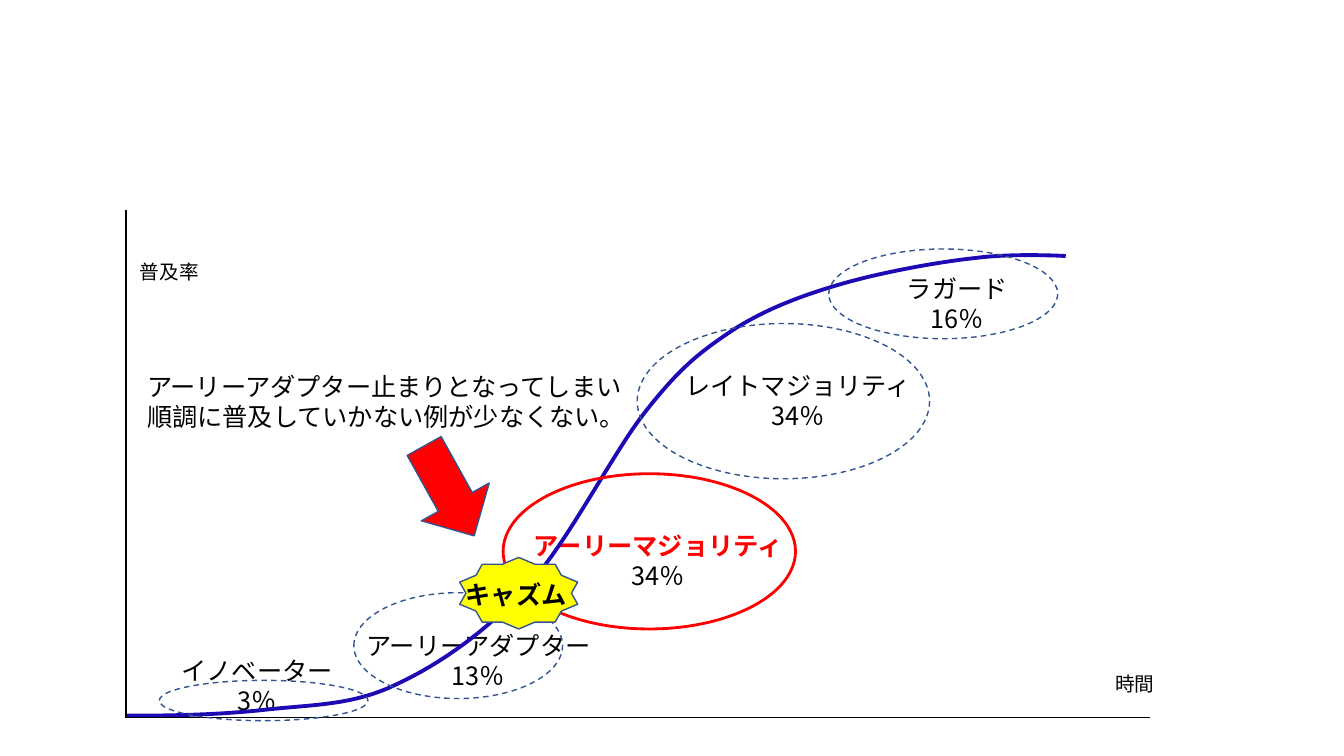
from dataclasses import dataclass

from lxml.etree import SubElement
from pptx import Presentation
from pptx.dml.color import RGBColor
from pptx.enum.dml import MSO_LINE
from pptx.enum.shapes import MSO_CONNECTOR, MSO_SHAPE
from pptx.enum.text import PP_ALIGN
from pptx.oxml.ns import qn
from pptx.util import Inches, Pt


@dataclass(frozen=True)
class Theme:
    """Colours, fonts and type sizes of the slide."""
    ink: str = "000000"
    alert: str = "FF0000"
    curve: str = "1E0AB4"
    outline: str = "325491"
    burst: str = "FFFF00"
    font: str = "Noto Sans CJK JP"
    rate_font: str = "Calibri"
    time_font: str = "Arial"
    body: int = 18
    small: int = 14


@dataclass(frozen=True)
class Box:
    """A rectangle measured in grid cells of a tenth of an inch."""
    left: float
    top: float
    width: float
    height: float

    def inner(self, column, row, columns, rows):
        """Return a box placed relative to this one."""
        return Box(self.left + column, self.top + row, columns, rows)

    def point(self, column, row):
        """Return slide coordinates of a grid point inside this box."""
        return cells(self.left + column), cells(self.top + row)

    def frame(self):
        """Return left, top, width and height as lengths."""
        return tuple(map(cells, (self.left, self.top, self.width, self.height)))


@dataclass(frozen=True)
class Stage:
    """An adopter group with its label and ellipse places in the plot."""
    name: str
    share: str
    label: tuple
    ellipse: tuple
    focus: bool = False


THEME = Theme()
PLOT = Box(12.5, 20.8, 101.6, 50.4)
STAGES = [
    Stage("アーリーマジョリティ", "34％", (39.1, 31.3, 27.3, 7.1), (37.4, 26.2, 29, 15.4), True),
    Stage("レイトマジョリティ", "34％", (54.3, 15.4, 24.7, 7.1), (50.7, 11.3, 29, 15.4)),
    Stage("ラガード", "16％", (76.4, 5.8, 12.1, 7.1), (69.7, 3.9, 22.7, 8.9)),
    Stage("イノベーター", "3％", (4.4, 43.7, 17.2, 7.1), (3.3, 46.7, 20.7, 4)),
    Stage("アーリーアダプター", "13％", (22.6, 41.2, 24.7, 7.1), (22.6, 38, 20.7, 10.5)),
]
CURVE_START = (0, 50.2)
CURVE_SEGMENTS = [
    ((4.8, 50.2), (9.5, 50.1), (13.9, 49.6)),
    ((18.4, 49.1), (22.5, 49.2), (26.8, 47.1)),
    ((31.1, 45.1), (35.7, 41.9), (39.8, 37.4)),
    ((44, 32.8), (48.3, 24), (51.7, 19.8)),
    ((55.1, 15.5), (57, 14.1), (60.1, 12)),
    ((63.2, 10), (66.5, 8.7), (70.5, 7.5)),
    ((74.5, 6.3), (80.4, 5.2), (84.2, 4.8)),
    ((88, 4.3), (93.2, 4.6), (93.2, 4.6)),
]


def cells(count):
    """Turn grid cells into a length."""
    return Inches(count / 10)


def add_text(page, box, lines, align=PP_ALIGN.LEFT, size=THEME.body, font=THEME.font):
    """Place lines of text, each given as wording, colour and weight."""
    text_box = page.shapes.add_textbox(*box.frame())
    text_box.text_frame.word_wrap = True
    para = text_box.text_frame.paragraphs[0]
    para.alignment = align
    for index, (wording, colour, bold) in enumerate(lines):
        if index:
            para.add_line_break()
        span = para.add_run()
        span.text = wording
        span.font.size = Pt(size)
        span.font.name = font
        span.font.bold = bold
        span.font.color.rgb = RGBColor.from_string(colour)
        SubElement(span.font._element, qn("a:ea")).set("typeface", THEME.font)


def style_line(line, colour, width, dash=None):
    """Set colour, width and dash of an outline."""
    line.color.rgb = RGBColor.from_string(colour)
    line.width = Pt(width)
    if dash:
        line.dash_style = dash


def add_figure(page, kind, box, fill=None, colour=THEME.outline, width=1, dash=None):
    """Place a preset shape, filled or hollow."""
    figure = page.shapes.add_shape(kind, *box.frame())
    figure.shadow.inherit = False
    if fill:
        figure.fill.solid()
        figure.fill.fore_color.rgb = RGBColor.from_string(fill)
    else:
        figure.fill.background()
    style_line(figure.line, colour, width, dash)
    return figure


def curve_points(steps=16):
    """Yield points along the chained cubic segments."""
    start = CURVE_START
    for first, second, end in CURVE_SEGMENTS:
        for step in range(1, steps + 1):
            t = step / steps
            weights = ((1 - t) ** 3, 3 * t * (1 - t) ** 2, 3 * t * t * (1 - t), t ** 3)
            corners = (start, first, second, end)
            yield tuple(sum(w * c[axis] for w, c in zip(weights, corners)) for axis in (0, 1))
        start = end


def draw_curve(page, box):
    """Draw the adoption curve."""
    builder = page.shapes.build_freeform(*box.point(*CURVE_START))
    builder.add_line_segments([box.point(*place) for place in curve_points()], close=False)
    curve = builder.convert_to_shape()
    curve.shadow.inherit = False
    curve.fill.background()
    style_line(curve.line, THEME.curve, 2.75)


def draw_axes(page, box):
    """Draw both axes and their titles."""
    corner = (0, box.height)
    for end in ((box.width, box.height), (0, 0)):
        axis = page.shapes.add_connector(
            MSO_CONNECTOR.STRAIGHT, *box.point(*corner), *box.point(*end))
        style_line(axis.line, THEME.ink, 1)
        SubElement(axis._element.spPr, qn("a:effectLst"))
    add_text(page, box.inner(0.4, 4.5, 8, 3.4), [("普及率", THEME.ink, False)],
             size=THEME.small, font=THEME.rate_font)
    add_text(page, box.inner(95.8, 45.4, 7.2, 3.4), [("時間", THEME.ink, False)],
             PP_ALIGN.RIGHT, THEME.small, THEME.time_font)


def draw_labels(page, box):
    """Write the name and share of every stage."""
    for stage in STAGES:
        colour = THEME.alert if stage.focus else THEME.ink
        add_text(page, box.inner(*stage.label),
                 [(stage.name, colour, stage.focus), (stage.share, THEME.ink, False)],
                 PP_ALIGN.CENTER)


def draw_ellipses(page, box):
    """Ring every stage, with the focus stage in a solid line."""
    for stage in STAGES:
        look = (dict(colour=THEME.alert, width=2) if stage.focus
                else dict(dash=MSO_LINE.DASH))
        add_figure(page, MSO_SHAPE.OVAL, box.inner(*stage.ellipse), **look)


def draw_chasm(page, box):
    """Mark the chasm with a burst, an arrow and a remark."""
    arrow = add_figure(page, MSO_SHAPE.DOWN_ARROW, box.inner(28.2, 22.8, 7.7, 10.2), THEME.alert)
    arrow.rotation = 330.9
    add_figure(page, MSO_SHAPE.STAR_10_POINT, box.inner(33.1, 34.5, 11.7, 7.1), THEME.burst)
    add_text(page, box.inner(32.7, 36.2, 13.2, 4), [("キャズム", THEME.ink, True)])
    add_text(page, box.inner(1.1, 15.5, 54.5, 7.1),
             [("アーリーアダプター止まりとなってしまい", THEME.ink, False),
              ("順調に普及していかない例が少なくない。", THEME.ink, False)])


def main():
    """Build the deck and save it."""
    deck = Presentation()
    deck.slide_width, deck.slide_height = Inches(13.33), Inches(7.5)
    page = deck.slides.add_slide(deck.slide_layouts[6])
    for draw in (draw_labels, draw_curve, draw_axes, draw_ellipses, draw_chasm):
        draw(page, PLOT)
    deck.save("out.pptx")


if __name__ == "__main__":
    main()
